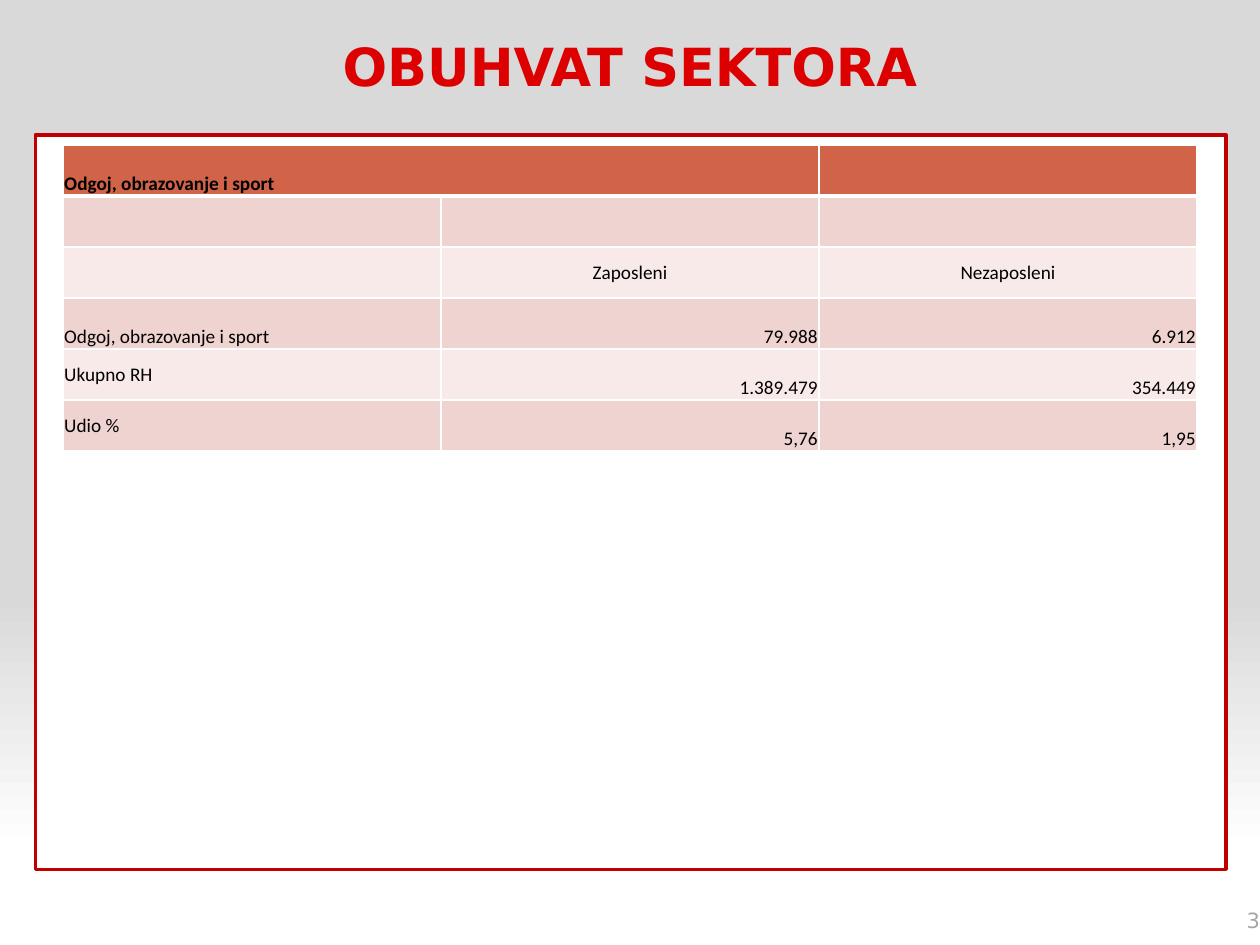
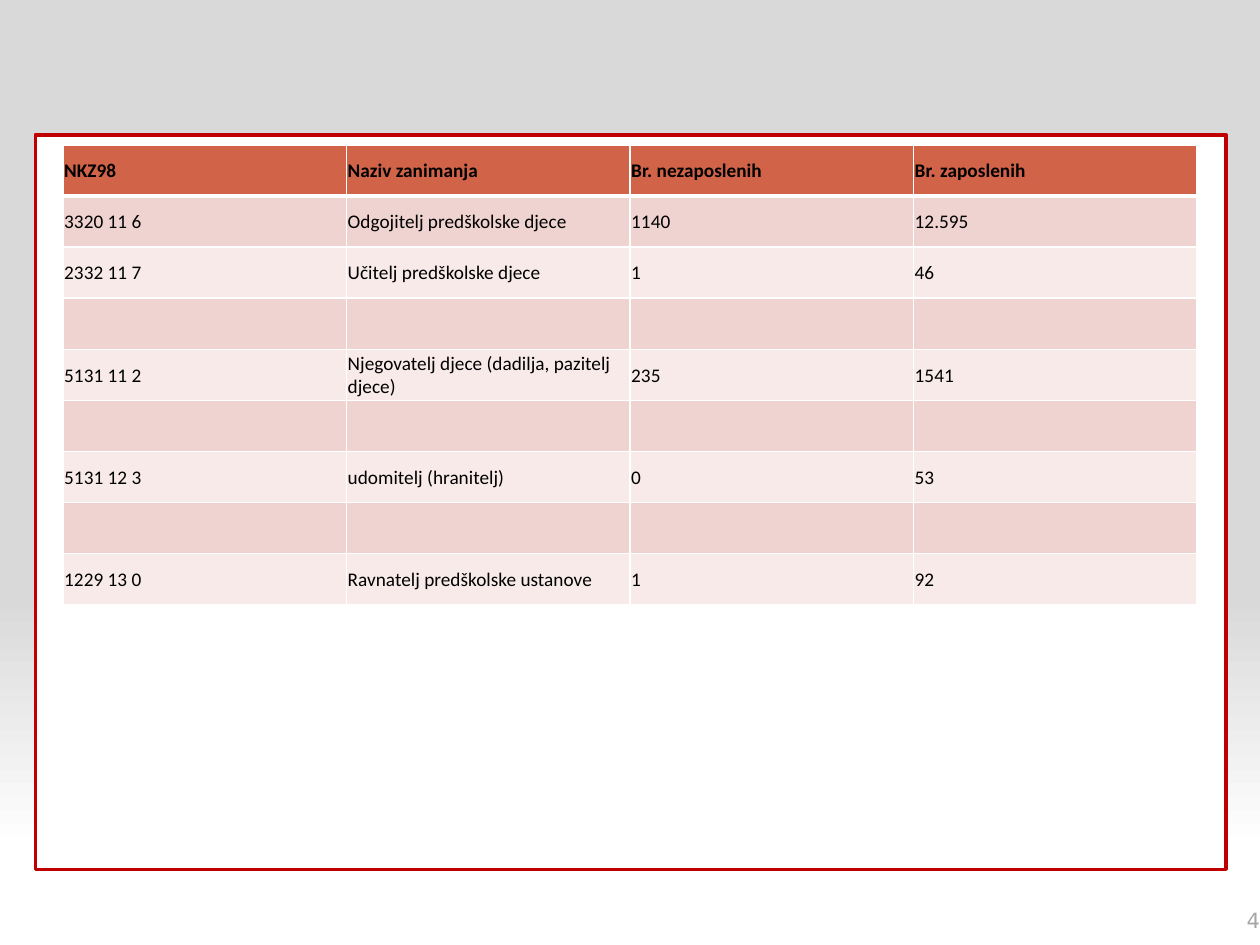
from dataclasses import dataclass

import lxml.etree
import pptx
import pptx.dml.color
import pptx.enum.dml
import pptx.enum.shapes
import pptx.enum.text
import pptx.oxml.ns
import pptx.util

Inches = pptx.util.Inches
Pt = pptx.util.Pt
ALIGN = pptx.enum.text.PP_ALIGN
ANCHOR = pptx.enum.text.MSO_ANCHOR


@dataclass(frozen=True)
class Theme:
    top: str = "D9D9D9"
    white: str = "FFFFFF"
    frame: str = "C00000"
    title: str = "DC0000"
    number: str = "A6A6A6"
    text: str = "000000"
    header: str = "D16349"
    band_dark: str = "EED3D0"
    band_light: str = "F7EAE9"
    display_font: str = "DejaVu Sans"
    table_font: str = "Calibri"
    title_size: int = 30
    number_size: int = 12
    table_size: int = 11
    thin: int = 1
    thick: int = 3


THEME = Theme()
LEFT = {"align": ALIGN.LEFT, "anchor": ANCHOR.MIDDLE}
LEFT_LOW = {"align": ALIGN.LEFT, "anchor": ANCHOR.BOTTOM}
CENTER = {"align": ALIGN.CENTER, "anchor": ANCHOR.MIDDLE}
RIGHT_LOW = {"align": ALIGN.RIGHT, "anchor": ANCHOR.BOTTOM}

COVERAGE = [
    ["Odgoj, obrazovanje i sport", "", ""],
    ["", "", ""],
    ["", "Zaposleni", "Nezaposleni"],
    ["Odgoj, obrazovanje i sport", "79.988", "6.912"],
    ["Ukupno RH", "1.389.479", "354.449"],
    ["Udio %", "5,76", "1,95"],
]

OCCUPATIONS = [
    ["NKZ98", "Naziv zanimanja", "Br. nezaposlenih", "Br. zaposlenih"],
    ["3320 11 6", "Odgojitelj predškolske djece", "1140", "12.595"],
    ["2332 11 7", "Učitelj predškolske djece", "1", "46"],
    [""] * 4,
    ["5131 11 2", "Njegovatelj djece (dadilja, pazitelj djece)", "235", "1541"],
    [""] * 4,
    ["5131 12 3", "udomitelj (hranitelj)", "0", "53"],
    [""] * 4,
    ["1229 13 0", "Ravnatelj predškolske ustanove", "1", "92"],
]


def rgb(value):
    return pptx.dml.color.RGBColor.from_string(value)


def set_all(obj, formats):
    for name, value in formats.items():
        setattr(obj, name, value)


def write(tf, text, align, font, size, color, bold=False):
    p = tf.paragraphs[0]
    p.alignment = align
    r = p.add_run()
    r.text = text
    set_all(r.font, {"name": font, "size": Pt(size), "bold": bold})
    r.font.color.rgb = rgb(color)


def add_text(s, box, text, align, margins, **style):
    tf = s.shapes.add_textbox(*map(Inches, box)).text_frame
    set_all(tf, {"word_wrap": True, "vertical_anchor": ANCHOR.MIDDLE, **margins})
    write(tf, text, align, THEME.display_font, **style)


def add_background(s):
    fill = s.background.fill
    fill.gradient()
    fill.gradient_angle = 270
    stops = ((0.63, THEME.top), (0.9, THEME.white))
    for stop, (position, color) in zip(fill.gradient_stops, stops):
        stop.position = position
        stop.color.rgb = rgb(color)


def add_frame(s):
    box = map(Inches, (0.28, 1.07, 9.45, 5.83))
    sp = s.shapes.add_shape(pptx.enum.shapes.MSO_SHAPE.RECTANGLE, *box)
    sp.shadow.inherit = False
    sp.fill.solid()
    sp.fill.fore_color.rgb = rgb(THEME.white)
    sp.line.color.rgb = rgb(THEME.frame)
    sp.line.width = Pt(2)


def add_title(s, text):
    add_text(s, (0.5, 0.05, 9, 0.94), text, ALIGN.CENTER, {},
             size=THEME.title_size, color=THEME.title, bold=True)


def add_number(s, number):
    add_text(s, (7.67, 7.1, 2.33, 0.4), str(number), ALIGN.RIGHT,
             {"margin_right": 0}, size=THEME.number_size, color=THEME.number)


def set_borders(cell, widths):
    qn = pptx.oxml.ns.qn
    tc_pr = cell._tc.get_or_add_tcPr()
    for i, (side, width) in enumerate(widths.items()):
        ln = lxml.etree.Element(qn(f"a:ln{side}"), w=str(Pt(width)))
        fill = lxml.etree.SubElement(ln, qn("a:solidFill"))
        lxml.etree.SubElement(fill, qn("a:srgbClr"), val=THEME.white)
        tc_pr.insert(i, ln)


def row_color(row):
    if row == 0:
        return THEME.header
    return THEME.band_dark if row % 2 else THEME.band_light


def add_table(s, rows, height, cell_format):
    box = map(Inches, (0.5, 1.15, 9, height))
    table = s.shapes.add_table(len(rows), len(rows[0]), *box).table
    set_all(table, {"first_row": False, "horz_banding": False})
    edge = Inches(0.01)
    for i, row in enumerate(rows):
        for j, text in enumerate(row):
            cell = table.cell(i, j)
            layout = cell_format(i, j)
            set_all(cell, {"margin_left": edge, "margin_right": edge,
                           "margin_top": edge, "margin_bottom": 0,
                           "vertical_anchor": layout["anchor"]})
            cell.fill.solid()
            cell.fill.fore_color.rgb = rgb(row_color(i))
            set_borders(cell, {"L": THEME.thin, "R": THEME.thin,
                               "T": THEME.thick if i == 1 else THEME.thin,
                               "B": THEME.thick if i == 0 else THEME.thin})
            if text:
                write(cell.text_frame, text, layout["align"], THEME.table_font,
                      THEME.table_size, THEME.text, bold=i == 0)
    return table


def coverage_format(row, col):
    if row == 2:
        return CENTER
    if col > 0:
        return RIGHT_LOW
    return LEFT_LOW if row in (0, 3) else LEFT


def occupation_format(row, col):
    return LEFT


def new_slide(prs, number):
    s = prs.slides.add_slide(prs.slide_layouts[6])
    add_background(s)
    add_frame(s)
    add_number(s, number)
    return s


def main():
    prs = pptx.Presentation()
    set_all(prs, {"slide_width": Inches(10), "slide_height": Inches(7.5)})

    s = new_slide(prs, 3)
    add_title(s, "OBUHVAT SEKTORA")
    table = add_table(s, COVERAGE, 2.43, coverage_format)
    table.cell(0, 0).merge(table.cell(0, 1))

    s = new_slide(prs, 4)
    add_table(s, OCCUPATIONS, 3.65, occupation_format)

    prs.save("out.pptx")


if __name__ == "__main__":
    main()
